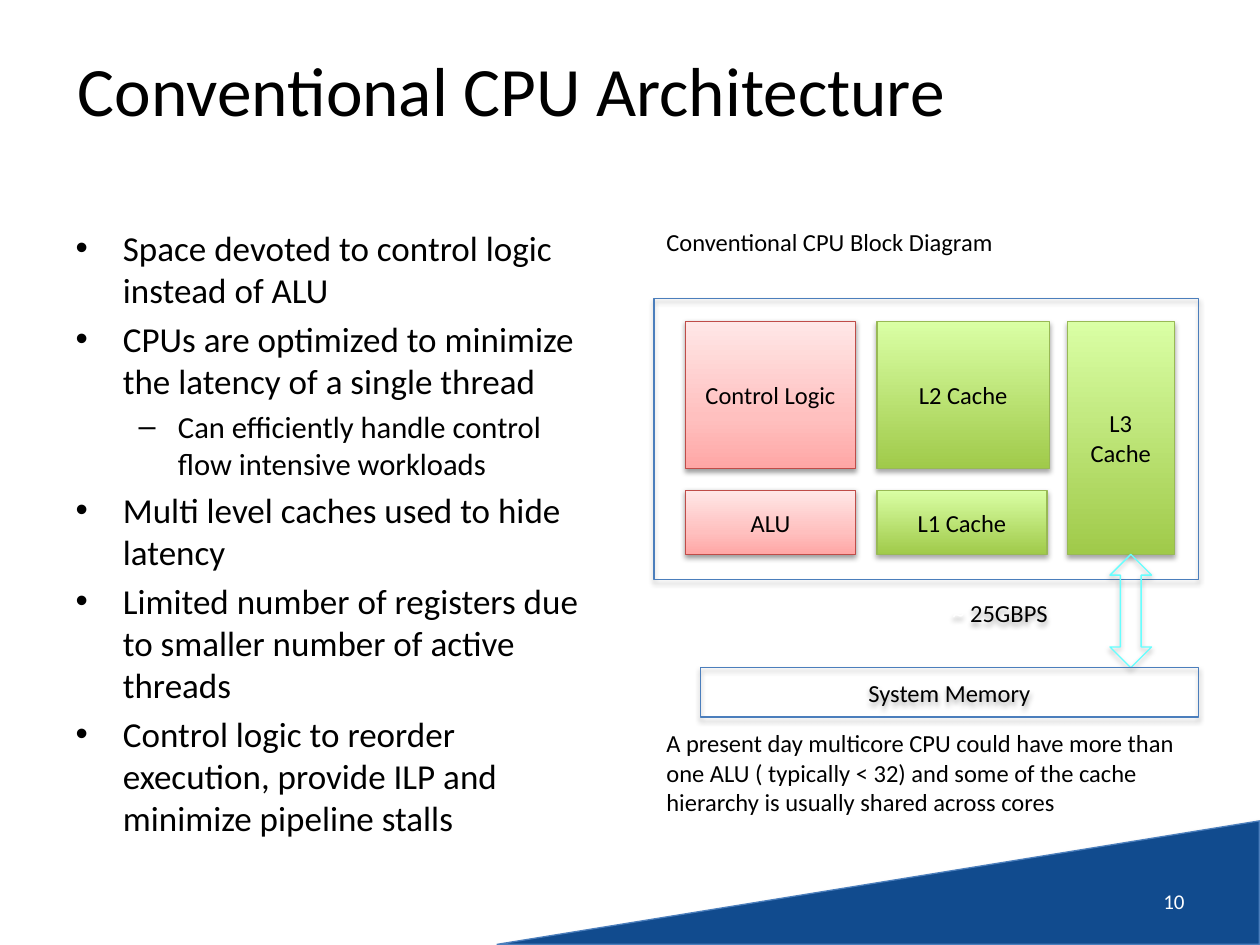
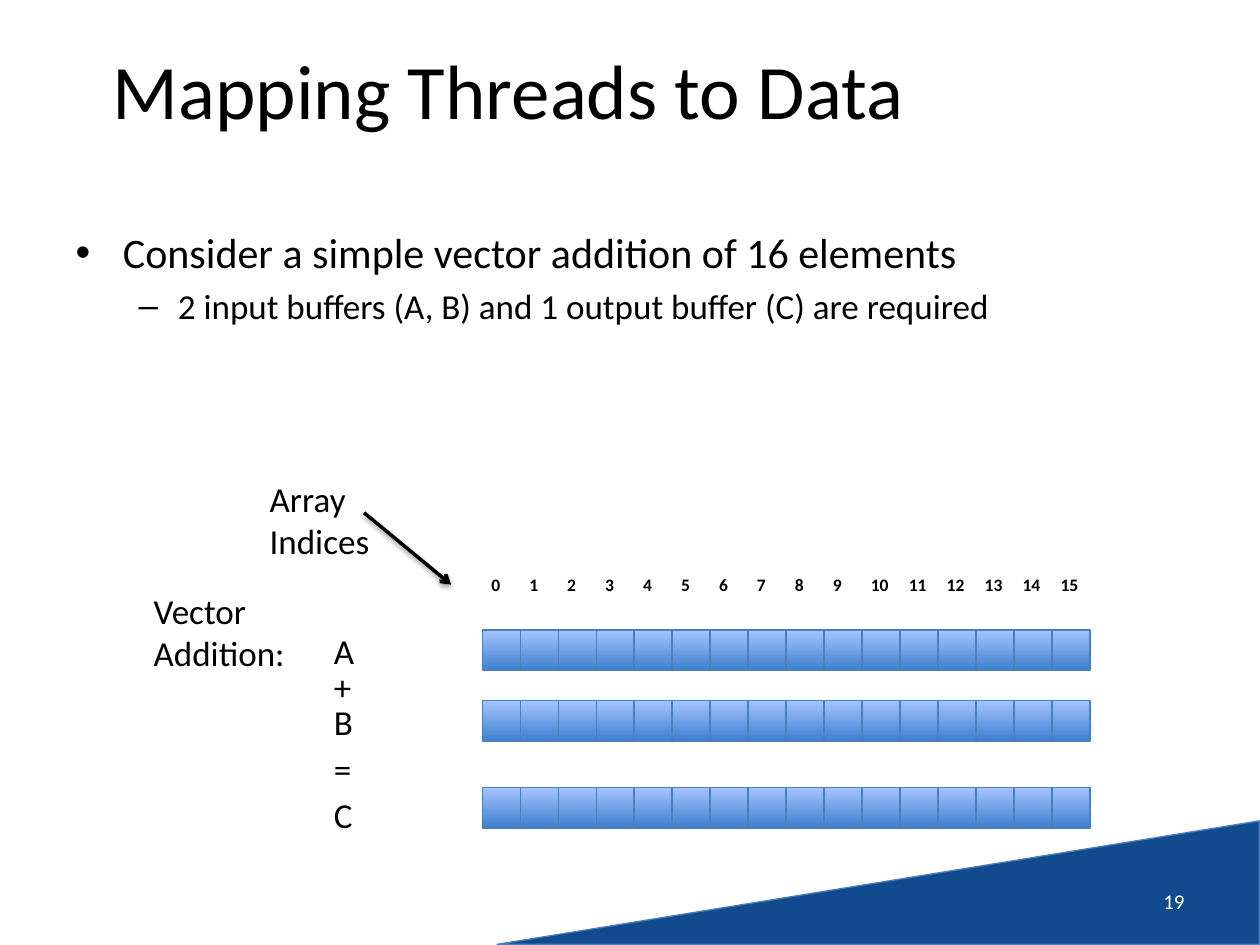
from typing import NamedTuple, Optional

from lxml.etree import SubElement
from pptx import Presentation
from pptx.dml.color import RGBColor
from pptx.enum.shapes import MSO_CONNECTOR, MSO_SHAPE
from pptx.enum.text import MSO_ANCHOR, MSO_AUTO_SIZE, PP_ALIGN
from pptx.oxml.ns import qn
from pptx.util import Inches, Pt

FONT = "Calibri"
BLACK, WHITE = "000000", "FFFFFF"
BAND_BLUE, OUTLINE_BLUE, CYAN = "114B8E", "4B7EBC", "66FFFF"

Stops = tuple[tuple[int, str], ...]


class Shadow(NamedTuple):
    alpha: int
    distance: float


class Look(NamedTuple):
    line: str
    stops: Stops = ()
    fill: Optional[str] = None
    shadow: Optional[Shadow] = None
    line_width: float = 0.75


class Box(NamedTuple):
    left: float
    top: float
    width: float
    height: float


class Block(NamedTuple):
    box: Box
    look: Look
    text: str = ""
    kind: MSO_SHAPE = MSO_SHAPE.RECTANGLE


class Label(NamedTuple):
    text: str
    box: Box
    size: float = 14
    inset: tuple[float, float] = (0.1, 0.05)
    wrap: bool = True


class Point(NamedTuple):
    text: str
    size: float
    level: int = 0


SOFT, STRONG = Shadow(35, 1.8), Shadow(38, 1.6)
BAND = Look(OUTLINE_BLUE, fill=BAND_BLUE, shadow=SOFT)
LOGIC = Look("BF4C48", ((0, "FFA6A5"), (35, "FFC0BF"), (100, "FFE7E7")), shadow=STRONG)
CACHE = Look("98B955", ((0, "A0CA4A"), (100, "DAFFA5")), shadow=SOFT)
FRAME = Look(OUTLINE_BLUE, shadow=SOFT)
BUS = Look(CYAN, shadow=SOFT)
ELEMENT = Look(OUTLINE_BLUE, ((0, "3F80CE"), (100, "A4C4FF")), line_width=1)
TIGHT = (0.07, 0.04)


def rgb(value: str) -> RGBColor:
    return RGBColor.from_string(value)


def lengths(box: Box) -> list[int]:
    return [Inches(value) for value in box]


def style_font(font, size: float, color: str = BLACK, bold: bool = False) -> None:
    font.name, font.size, font.bold = FONT, Pt(size), bold
    font.color.rgb = rgb(color)


def add_color(parent, color: str):
    return SubElement(parent, qn("a:srgbClr"), val=color)


def cast_shadow(properties, shadow: Shadow) -> None:
    effects = properties.find(qn("a:effectLst"))
    if effects is None:
        effects = SubElement(properties, qn("a:effectLst"))
    outer = SubElement(effects, qn("a:outerShdw"), blurRad=str(Pt(3.1)),
                       dist=str(Pt(shadow.distance)), dir="5400000", rotWithShape="0")
    SubElement(add_color(outer, BLACK), qn("a:alpha"), val=str(shadow.alpha * 1000))


def fill_gradient(shape, stops: Stops) -> None:
    """Run the colour stops from the bottom edge to the top edge."""
    shape.fill.gradient()
    shape.fill.gradient_angle = 90
    stop_list = shape._element.spPr.find(f".//{qn('a:gsLst')}")
    for old_stop in list(stop_list):
        stop_list.remove(old_stop)
    for position, color in stops:
        add_color(SubElement(stop_list, qn("a:gs"), pos=str(position * 1000)), color)


def draw_block(slide, block: Block):
    look = block.look
    shape = slide.shapes.add_shape(block.kind, *lengths(block.box))
    if look.stops:
        fill_gradient(shape, look.stops)
    elif look.fill:
        shape.fill.solid()
        shape.fill.fore_color.rgb = rgb(look.fill)
    else:
        shape.fill.background()
    shape.line.color.rgb = rgb(look.line)
    shape.line.width = Pt(look.line_width)
    shape.shadow.inherit = False
    if look.shadow:
        cast_shadow(shape._element.spPr, look.shadow)
    if block.text:
        frame = shape.text_frame
        frame.word_wrap = True
        frame.vertical_anchor = MSO_ANCHOR.MIDDLE
        paragraph = frame.paragraphs[0]
        paragraph.text = block.text
        paragraph.alignment = PP_ALIGN.CENTER
        style_font(paragraph.font, 14)
    return shape


def draw_label(slide, label: Label, color: str = BLACK):
    text_box = slide.shapes.add_textbox(*lengths(label.box))
    frame = text_box.text_frame
    frame.word_wrap = label.wrap
    side, edge = (Inches(value) for value in label.inset)
    frame.margin_left = frame.margin_right = side
    frame.margin_top = frame.margin_bottom = edge
    paragraph = frame.paragraphs[0]
    paragraph.text = label.text
    style_font(paragraph.font, label.size, color)
    return text_box


def move(placeholder, box: Box):
    placeholder.left, placeholder.top, placeholder.width, placeholder.height = lengths(box)
    frame = placeholder.text_frame
    frame.auto_size = MSO_AUTO_SIZE.NONE
    return frame


def start_slide(deck, title: str, title_size: float, title_width: float,
                points: list[Point], body_box: Box, number: str):
    slide = deck.slides.add_slide(deck.slide_layouts[1])

    # Corner band, a right triangle turned on its side
    band = draw_block(slide, Block(Box(6.48, 3.98, 0.98, 6.05), BAND,
                                   kind=MSO_SHAPE.RIGHT_TRIANGLE))
    band.rotation = 270

    # Title
    heading = move(slide.shapes.title, Box(0.5, 0.08, title_width, 1.25))
    heading.vertical_anchor = MSO_ANCHOR.MIDDLE
    heading.text = title
    heading.paragraphs[0].alignment = PP_ALIGN.CENTER
    style_font(heading.paragraphs[0].font, title_size)

    # Bulleted points; bullets and indents come from the template levels
    body = move(slide.placeholders[1], body_box)
    for index, point in enumerate(points):
        paragraph = body.add_paragraph() if index else body.paragraphs[0]
        paragraph.text, paragraph.level = point.text, point.level
        style_font(paragraph.font, point.size)
    body.paragraphs[0].space_before = Pt(0)

    # Page number
    page = draw_label(slide, Label(number, Box(7.17, 6.95, 2.33, 0.4), 12), WHITE)
    page.text_frame.vertical_anchor = MSO_ANCHOR.MIDDLE
    page.text_frame.paragraphs[0].alignment = PP_ALIGN.RIGHT
    return slide


def build_cpu_slide(deck) -> None:
    points = [
        Point("Space devoted to control logic instead of ALU", 20),
        Point("CPUs are optimized to minimize the latency of a single thread", 20),
        Point("Can efficiently handle control flow intensive workloads", 17.5, 1),
        Point("Multi level caches used to hide latency", 20),
        Point("Limited number of registers due to smaller number of active threads", 20),
        Point("Control logic to reorder execution, provide ILP and minimize pipeline stalls", 20),
    ]
    slide = start_slide(deck, "Conventional CPU Architecture", 39.6, 7.12,
                        points, Box(0.5, 1.75, 4.31, 4.95), "10")

    # Block diagram
    for block in (
        Block(Box(5.44, 2.55, 1.35, 1.17), LOGIC, "Control Logic"),
        Block(Box(5.44, 3.89, 1.35, 0.51), LOGIC, "ALU"),
        Block(Box(6.96, 3.89, 1.35, 0.51), CACHE, "L1 Cache"),
        Block(Box(6.96, 2.55, 1.37, 1.17), CACHE, "L2 Cache"),
        Block(Box(5.19, 2.37, 4.32, 2.23), FRAME),
        Block(Box(8.47, 2.55, 0.85, 1.85), CACHE, "L3 Cache"),
        Block(Box(8.81, 4.4, 0.33, 0.9), BUS, kind=MSO_SHAPE.UP_DOWN_ARROW),
        Block(Box(5.56, 5.3, 3.95, 0.39), FRAME, "System Memory"),
    ):
        draw_block(slide, block)

    # Caption and remark
    draw_label(slide, Label("Conventional CPU Block Diagram",
                            Box(5.19, 1.75, 3.15, 0.34), wrap=False))
    draw_label(slide, Label("A present day multicore CPU could have more than one ALU "
                            "( typically < 32) and some of the cache hierarchy is usually "
                            "shared across cores", Box(5.19, 5.73, 4.32, 0.81)))

    # Bandwidth, with a white sign that shows by its shadow
    bandwidth = draw_label(slide, Label("~ ", Box(7.46, 4.7, 1.35, 0.34)), WHITE)
    rate = bandwidth.text_frame.paragraphs[0].add_run()
    rate.text = "25GBPS"
    style_font(rate.font, 14)
    cast_shadow(bandwidth._element.spPr, SOFT)


def build_threads_slide(deck) -> None:
    points = [
        Point("Consider a simple vector addition of 16 elements", 24),
        Point("2 input buffers (A, B) and 1 output buffer (C) are required", 20, 1),
    ]
    slide = start_slide(deck, "Mapping Threads to Data", 44, 7.07,
                        points, Box(0.5, 1.75, 9, 1.32), "19")

    # Equation down the left side
    equation = (("A", 4.96), ("+", 5.24), ("B", 5.52), ("=", 5.89), ("C", 6.26))
    for symbol, top in equation:
        draw_label(slide, Label(symbol, Box(2.58, top, 0.28, 0.74), 20, TIGHT))
    draw_label(slide, Label("Vector Addition:", Box(1.15, 4.64, 1.74, 0.74), 20, TIGHT))
    draw_label(slide, Label("Array Indices", Box(2.07, 3.75, 1.51, 0.74), 20, TIGHT))

    # Arrow to the indices
    pointer = slide.shapes.add_connector(MSO_CONNECTOR.STRAIGHT, Inches(2.89), Inches(4.07),
                                         Inches(3.58), Inches(4.64))
    pointer.line.color.rgb = rgb(BLACK)
    pointer.line.width = Pt(2)
    SubElement(pointer.line._get_or_add_ln(), qn("a:tailEnd"), type="arrow")
    cast_shadow(pointer._element.spPr, STRONG)

    # Buffers A, B and C
    count, left, width = 16, 3.83, 4.82
    pitch = width / count
    for top in (5, 5.56, 6.25):
        for index in range(count):
            draw_block(slide, Block(Box(left + index * pitch, top, pitch, 0.32), ELEMENT))

    # Index row
    indices = slide.shapes.add_table(1, count, *lengths(Box(left, 4.52, width, 0.3))).table
    indices.first_row = indices.horz_banding = False
    for index, cell in enumerate(indices.rows[0].cells):
        cell.fill.background()
        cell.margin_left = cell.margin_right = Inches(TIGHT[0])
        cell.margin_top = cell.margin_bottom = Inches(TIGHT[1])
        paragraph = cell.text_frame.paragraphs[0]
        paragraph.text = str(index)
        style_font(paragraph.font, 10, bold=True)


def main() -> None:
    deck = Presentation()
    deck.slide_width, deck.slide_height = Inches(10), Inches(7.5)
    build_cpu_slide(deck)
    build_threads_slide(deck)
    deck.save("out.pptx")


if __name__ == "__main__":
    main()
